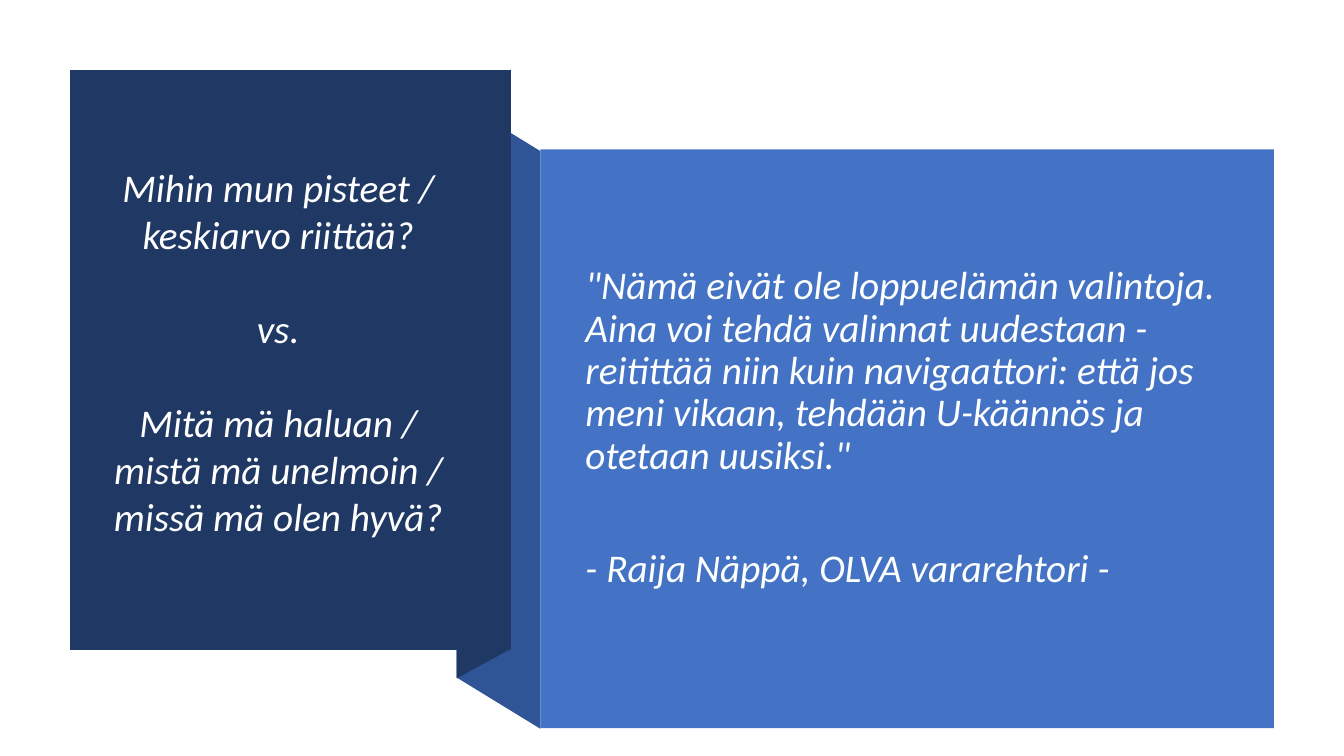
import pptx
import pptx.util
import pptx.dml.color
import pptx.enum.shapes
import pptx.enum.text
from dataclasses import dataclass

Pt = pptx.util.Pt
ALIGN = pptx.enum.text.PP_ALIGN
ANCHOR = pptx.enum.text.MSO_ANCHOR


@dataclass(frozen=True)
class Theme:
    navy: str = "203864"
    fold: str = "2F5597"
    blue: str = "4472C4"
    white: str = "FFFFFF"
    quote_white: str = "FEFFFF"
    font: str = "Calibri"
    size: float = 28


THEME = Theme()


def rgb(color):
    return pptx.dml.color.RGBColor.from_string(color)


def paint(sp, color):
    sp.shadow.inherit = False
    sp.fill.solid()
    sp.fill.fore_color.rgb = rgb(color)
    sp.line.fill.background()


def add_polygon(s, points, color):
    corners = [(Pt(x), Pt(y)) for x, y in points]
    builder = s.shapes.build_freeform(*corners[0])
    builder.add_line_segments(corners[1:], close=True)
    paint(builder.convert_to_shape(), color)


def add_panel(s, x, y, w, h, color):
    rect = pptx.enum.shapes.MSO_SHAPE.RECTANGLE
    paint(s.shapes.add_shape(rect, Pt(x), Pt(y), Pt(w), Pt(h)), color)


def add_text(s, x, y, w, h, paragraphs, color, align, anchor, line_spacing=1.0):
    """Each paragraph is (text, space before in points)."""
    tf = s.shapes.add_textbox(Pt(x), Pt(y), Pt(w), Pt(h)).text_frame
    tf.word_wrap = True
    tf.vertical_anchor = anchor
    for i, (text, space) in enumerate(paragraphs):
        p = tf.add_paragraph() if i else tf.paragraphs[0]
        p.alignment = align
        p.line_spacing = line_spacing
        p.space_before = Pt(space)
        r = p.add_run()
        r.text = text
        r.font.name = THEME.font
        r.font.size = Pt(THEME.size)
        r.font.italic = True
        r.font.color.rgb = rgb(color)


def main():
    prs = pptx.Presentation()
    prs.slide_width, prs.slide_height = Pt(960), Pt(540)
    s = prs.slides.add_slide(prs.slide_layouts[6])

    # Folded ribbon between the panels
    add_polygon(s, [(386, 520.6), (326.2, 484), (326.2, 71.3), (386, 108)], THEME.fold)
    add_polygon(s, [(364.6, 463.7), (326.2, 484.6), (326.2, 70.6), (364.6, 49.7)], THEME.navy)

    # Question and quote panels
    add_polygon(s, [(49.9, 50.2), (365, 50.2), (365, 464.2), (49.9, 464.2)], THEME.navy)
    add_panel(s, 386, 106.7, 524, 413.4, THEME.blue)

    # Quote
    quote = [
        ("\"Nämä eivät ole loppuelämän valintoja. Aina voi tehdä valinnat uudestaan - "
         "reitittää niin kuin navigaattori: että jos meni vikaan, tehdään U-käännös "
         "ja otetaan uusiksi.\"", 10),
        ("- Raija Näppä, OLVA vararehtori -", 50.5),
    ]
    add_text(s, 411.1, 135.4, 468.7, 341.3, quote, THEME.quote_white,
             ALIGN.LEFT, ANCHOR.MIDDLE, 0.9)

    # Opposed questions
    questions = [
        ("Mihin mun pisteet / keskiarvo riittää?", 0),
        ("vs.", 33.5),
        ("Mitä mä haluan / mistä mä unelmoin / missä mä olen hyvä?", 33.5),
    ]
    add_text(s, 71.3, 113, 254.9, 278.6, questions, THEME.white, ALIGN.CENTER, ANCHOR.TOP)

    prs.save("out.pptx")


if __name__ == "__main__":
    main()
